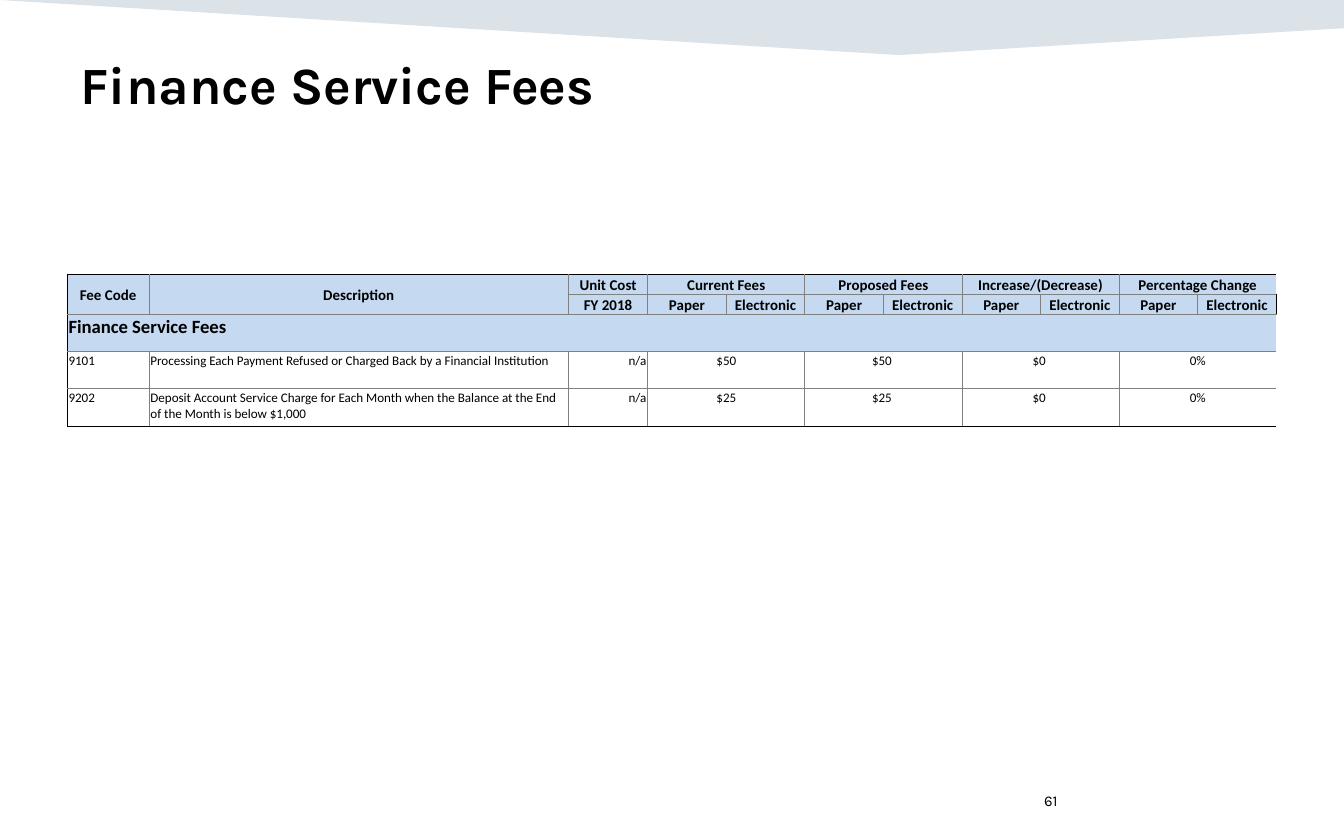
from lxml.etree import SubElement
from pptx import Presentation
from pptx.dml.color import RGBColor
from pptx.enum.text import MSO_ANCHOR as Anchor, PP_ALIGN as Align
from pptx.oxml import parse_xml
from pptx.oxml.ns import nsdecls, qn
from pptx.util import Inches, Pt

COLORS = {"banner": "164469", "text": "000000", "header": "C5D9F1",
          "grid": "808080", "frame": "000000"}

# Content
TITLE = "Finance Service Fees"
PAGE_NUMBER = "61"
GROUPS = ["Current Fees", "Proposed Fees", "Increase/(Decrease)", "Percentage Change"]
SECTION = "Finance Service Fees"
FEES = [
    ("9101", "Processing Each Payment Refused or Charged Back by a Financial Institution",
     "n/a", "$50", "$50 ", "$0 ", "0%"),
    ("9202", "Deposit Account Service Charge for Each Month when the Balance at the End "
     "of the Month is below $1,000", "n/a", "$25", "$25 ", "$0 ", "0%"),
]

# Geometry in inches
SLIDE = (10, 6.25)
BANNER = [(0, 0), (10, 0), (10, 0.21), (6.69, 0.41)]
TITLE_BOX = (0.5, 0.34, 7.33, 0.64)
NUMBER_BOX = (7.67, 5.79, 2.33, 0.33)
TABLE_BOX = (0.5, 2.04, 9, 1.13)
LEAD_COLUMNS = [0.61, 3.12, 0.59]
HEAD_ROWS = [0.15, 0.15]
FEE_COLUMNS = 2 * len(GROUPS)
BODY_ROWS = 1 + len(FEES)
COLUMNS = LEAD_COLUMNS + [(TABLE_BOX[2] - sum(LEAD_COLUMNS)) / FEE_COLUMNS] * FEE_COLUMNS
ROWS = HEAD_ROWS + [(TABLE_BOX[3] - sum(HEAD_ROWS)) / BODY_ROWS] * BODY_ROWS

# Cell formats
HEAD = {"size": 8, "bold": True, "align": Align.CENTER, "anchor": Anchor.MIDDLE, "fill": "header"}
SUBHEAD = {**HEAD, "anchor": Anchor.BOTTOM}
BAND = {**HEAD, "size": 10, "align": Align.LEFT, "anchor": Anchor.TOP}
BODY = {"size": 7, "bold": False, "align": Align.LEFT, "anchor": Anchor.TOP, "fill": None}
BODY_ALIGN = [Align.LEFT, Align.LEFT, Align.RIGHT] + [Align.CENTER] * len(GROUPS)


def rgb(name):
    return RGBColor.from_string(COLORS[name])


def write(paragraph, text, font, size, bold=False):
    run = paragraph.add_run()
    run.text = text
    for name, value in {"name": font, "size": Pt(size), "bold": bold}.items():
        setattr(run.font, name, value)
    run.font.color.rgb = rgb("text")


def add_text(slide, box, text, size, bold, anchor):
    frame = slide.shapes.add_textbox(*map(Inches, box)).text_frame
    frame.word_wrap = True
    frame.vertical_anchor = anchor
    write(frame.paragraphs[0], text, "Karla", size, bold)


def set_borders(cell, edges):
    """Draw the four edges of a cell; an edge without a colour stays empty."""
    properties = cell._tc.get_or_add_tcPr()
    for index, (side, color) in enumerate(edges.items()):
        paint = (f'<a:solidFill><a:srgbClr val="{COLORS[color]}"/></a:solidFill>'
                 if color else "<a:noFill/>")
        properties.insert(index, parse_xml(
            f'<a:ln{side} {nsdecls("a")} w="{Pt(0.5)}">{paint}</a:ln{side}>'))


def fill_cell(table, row, column, text, style, height=1, width=1):
    bottom, right = row + height - 1, column + width - 1
    origin = table.cell(row, column)
    if height * width > 1:
        origin.merge(table.cell(bottom, right))
    for r in range(row, bottom + 1):
        for c in range(column, right + 1):
            cell = table.cell(r, c)
            margins = {"margin_left": 0.01, "margin_right": 0.01,
                       "margin_top": 0.01, "margin_bottom": 0}
            for name, value in margins.items():
                setattr(cell, name, Inches(value))
            cell.vertical_anchor = style["anchor"]
            if style["fill"]:
                cell.fill.solid()
                cell.fill.fore_color.rgb = rgb(style["fill"])
            else:
                cell.fill.background()
            # side: (on the edge of the merged area, on the edge of the table)
            sides = {"L": (c == column, c == 0),
                     "R": (c == right, c == len(COLUMNS) - 1),
                     "T": (r == row, r == 0),
                     "B": (r == bottom, r == len(ROWS) - 1)}
            set_borders(cell, {side: ("frame" if outer else "grid") if edge else None
                               for side, (edge, outer) in sides.items()})
            paragraph = cell.text_frame.paragraphs[0]
            if cell.is_spanned:
                SubElement(paragraph._p, qn("a:endParaRPr")).set("sz", "700")
    paragraph = origin.text_frame.paragraphs[0]
    paragraph.alignment = style["align"]
    write(paragraph, text, "Calibri", style["size"], style["bold"])


presentation = Presentation()
presentation.slide_width, presentation.slide_height = map(Inches, SLIDE)
slide = presentation.slides.add_slide(presentation.slide_layouts[6])

# Banner
points = [(Inches(x), Inches(y)) for x, y in BANNER]
builder = slide.shapes.build_freeform(*points[0])
builder.add_line_segments(points[1:], close=True)
banner = builder.convert_to_shape()
banner.shadow.inherit = False
banner.fill.solid()
banner.fill.fore_color.rgb = rgb("banner")
banner.line.fill.background()
banner_color = banner._element.spPr.find(qn("a:solidFill"))[0]
SubElement(banner_color, qn("a:alpha")).set("val", "15000")

# Title and page number
add_text(slide, TITLE_BOX, TITLE, 28, True, Anchor.TOP)
add_text(slide, NUMBER_BOX, PAGE_NUMBER, 8, False, Anchor.MIDDLE)

# Fee table
table = slide.shapes.add_table(len(ROWS), len(COLUMNS), *map(Inches, TABLE_BOX)).table
table.first_row = table.horz_banding = False
for column, width in zip(table.columns, COLUMNS):
    column.width = Inches(width)
for row, height in zip(table.rows, ROWS):
    row.height = Inches(height)

# Header rows
fill_cell(table, 0, 0, "Fee Code", HEAD, height=2)
fill_cell(table, 0, 1, "Description", HEAD, height=2)
fill_cell(table, 0, 2, "Unit Cost", HEAD)
fill_cell(table, 1, 2, "FY 2018", HEAD)
for index, group in enumerate(GROUPS):
    first = len(LEAD_COLUMNS) + 2 * index
    fill_cell(table, 0, first, group, HEAD, width=2)
    fill_cell(table, 1, first, "Paper", SUBHEAD)
    fill_cell(table, 1, first + 1, "Electronic", SUBHEAD)

# Section band and fees
fill_cell(table, 2, 0, SECTION, BAND, width=len(COLUMNS))
for row, fee in enumerate(FEES, start=3):
    column = 0
    for text, align in zip(fee, BODY_ALIGN):
        width = 1 if column < len(LEAD_COLUMNS) else 2
        fill_cell(table, row, column, text, {**BODY, "align": align}, width=width)
        column += width

presentation.save("out.pptx")
